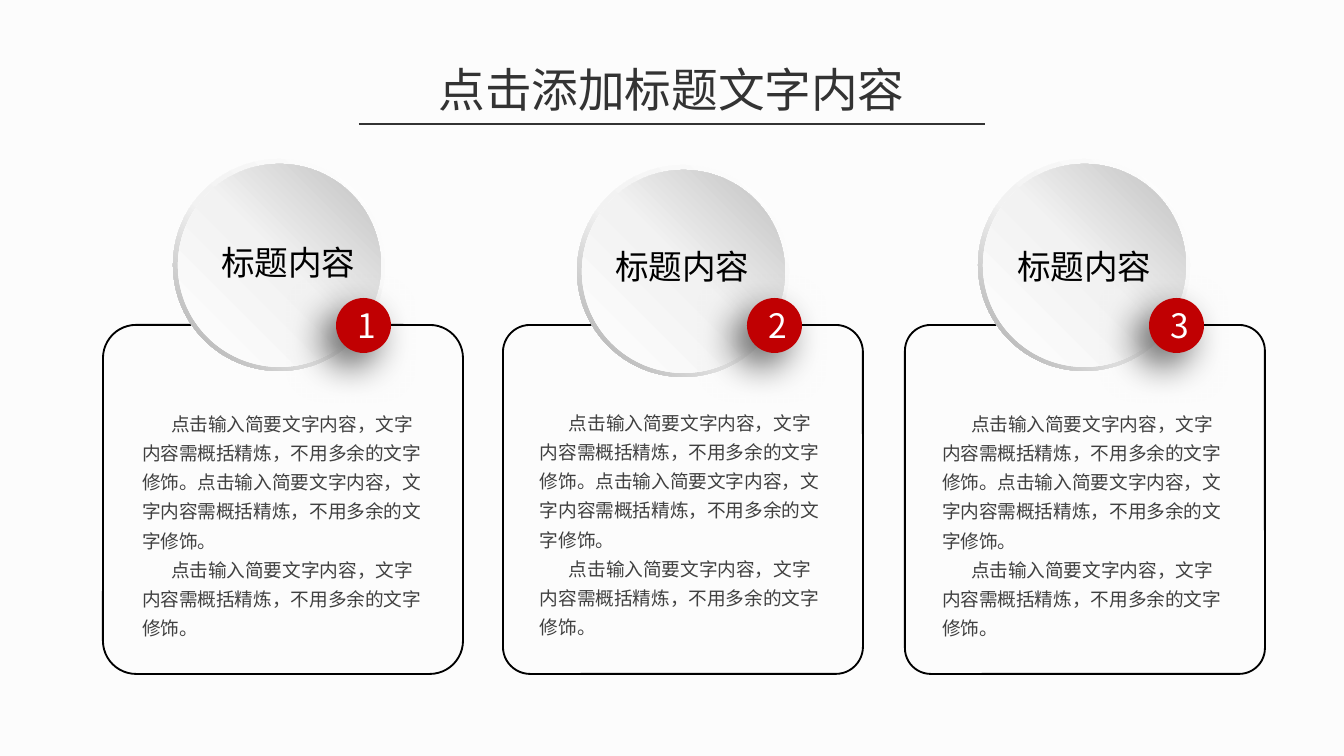
from lxml import etree
from pptx import Presentation
from pptx.dml.color import RGBColor
from pptx.enum.shapes import MSO_CONNECTOR, MSO_SHAPE
from pptx.enum.text import MSO_ANCHOR, MSO_AUTO_SIZE, PP_ALIGN
from pptx.oxml.ns import qn
from pptx.util import Pt

PX = 9144000 / 1344
FONT = "Noto Sans CJK SC"
CENTER, LEFT = PP_ALIGN.CENTER, PP_ALIGN.LEFT
MIDDLE = MSO_ANCHOR.MIDDLE
GROW = MSO_AUTO_SIZE.SHAPE_TO_FIT_TEXT
ROUND, RING, OVAL = MSO_SHAPE.ROUNDED_RECTANGLE, MSO_SHAPE.DONUT, MSO_SHAPE.OVAL
STRAIGHT = MSO_CONNECTOR.STRAIGHT

LONG = "点击输入简要文字内容，文字内容需概括精炼，不用多余的文字修饰。"
BODY = [LONG * 2, LONG]
CARDS = [
    dict(left=103, bend=0.095, disc=(173, 159), badge=336, label=(208, 235), body=(142, 406)),
    dict(left=503, bend=0.078, disc=(577, 165), badge=747, label=(602, 239), body=(540, 405)),
    dict(left=905, bend=0.074, disc=(978, 159), badge=1149, label=(1004, 239), body=(942, 406)),
]


def px(n):
    return round(n * PX)


def color(code):
    return RGBColor.from_string(code)


def node(parent, tag, **attrs):
    return etree.SubElement(parent, qn("a:" + tag), {k: str(v) for k, v in attrs.items()})


def style(para, size, code, align=LEFT):
    para.alignment = align
    font = para.font
    font.size = Pt(size)
    font.color.rgb = color(code)
    font.name = FONT
    node(para._p.pPr.find(qn("a:defRPr")), "ea", typeface=FONT)


def shape(shapes, kind, x, y, w, h):
    item = shapes.add_shape(kind, px(x), px(y), px(w), px(h))
    item.shadow.inherit = False
    item.line.fill.background()
    return item


def blend(item, stops, angle):
    item.fill.gradient()
    item.fill.gradient_angle = angle
    rows = item._element.spPr.find(qn("a:gradFill")).find(qn("a:gsLst"))
    for old in list(rows):
        rows.remove(old)
    for pos, code in stops:
        node(node(rows, "gs", pos=pos * 1000), "srgbClr", val=code)


def glow(item):
    effects = item._element.spPr.find(qn("a:effectLst"))
    cast = node(effects, "outerShdw", blurRad=Pt(20), dist=Pt(10),
                dir=135 * 60000, algn="tr", rotWithShape=0)
    node(node(cast, "srgbClr", val="000000"), "alpha", val=60000)


def text(slide, x, y, w, h, lines, size, code, align=LEFT, wrap=True, inset=None, indent=0):
    box = slide.shapes.add_textbox(px(x), px(y), px(w), px(h))
    frame = box.text_frame
    frame.word_wrap = wrap
    frame.auto_size = GROW
    if inset is not None:
        frame.margin_left = frame.margin_right = px(inset)
        frame.margin_top = frame.margin_bottom = px(inset)
    frame.text = "\n".join(lines)
    for para in frame.paragraphs:
        if indent:
            para.line_spacing = 1.3
            para._p.get_or_add_pPr().set("indent", str(px(indent)))
        style(para, size, code, align)


def rule(slide, x1, x2, y):
    line = slide.shapes.add_connector(STRAIGHT, px(x1), px(y), px(x2), px(y))
    line.line.color.rgb = color("333333")
    line.line.width = Pt(0.75)
    node(line._element.spPr, "effectLst")


def frame(slide, x, bend):
    card = shape(slide.shapes, ROUND, x, 325, 360, 349)
    card.adjustments[0] = bend
    card.fill.background()
    card.line.color.rgb = color("000000")
    card.line.width = Pt(1)


def disc(slide, x, y):
    group = slide.shapes.add_group_shape()
    ring = shape(group.shapes, RING, x, y, 212, 212)
    ring.adjustments[0] = 0.049
    blend(ring, [(0, "FFFFFF"), (55, "F2F2F2"), (100, "A6A6A6")], 225)
    face = shape(group.shapes, OVAL, x + 5, y + 5, 203, 203)
    blend(face, [(0, "FFFFFF"), (51, "F2F2F2"), (100, "BFBFBF")], 45)


def badge(slide, x, num):
    dot = shape(slide.shapes, OVAL, x, 298, 55, 55)
    dot.fill.solid()
    dot.fill.fore_color.rgb = color("C00002")
    glow(dot)
    dot.text_frame.text = str(num)
    dot.text_frame.vertical_anchor = MIDDLE
    style(dot.text_frame.paragraphs[0], 18, "FFFFFF", CENTER)


def main():
    deck = Presentation()
    deck.slide_width, deck.slide_height = px(1344), px(756)
    slide = deck.slides.add_slide(deck.slide_layouts[6])
    slide.background.fill.solid()
    slide.background.fill.fore_color.rgb = color("FCFCFC")
    text(slide, 423, 54, 497, 70, ["点击添加标题文字内容"], 25, "333333", CENTER)
    rule(slide, 359, 985, 124)
    for num, card in enumerate(CARDS, 1):
        frame(slide, card["left"], card["bend"])
        disc(slide, *card["disc"])
        badge(slide, card["badge"], num)
        text(slide, *card["label"], 162, 54, ["标题内容"], 18, "000000", wrap=False)
        text(slide, *card["body"], 286, 235, BODY, 10, "404040", inset=0, indent=29)
    deck.save("out.pptx")


if __name__ == "__main__":
    main()
